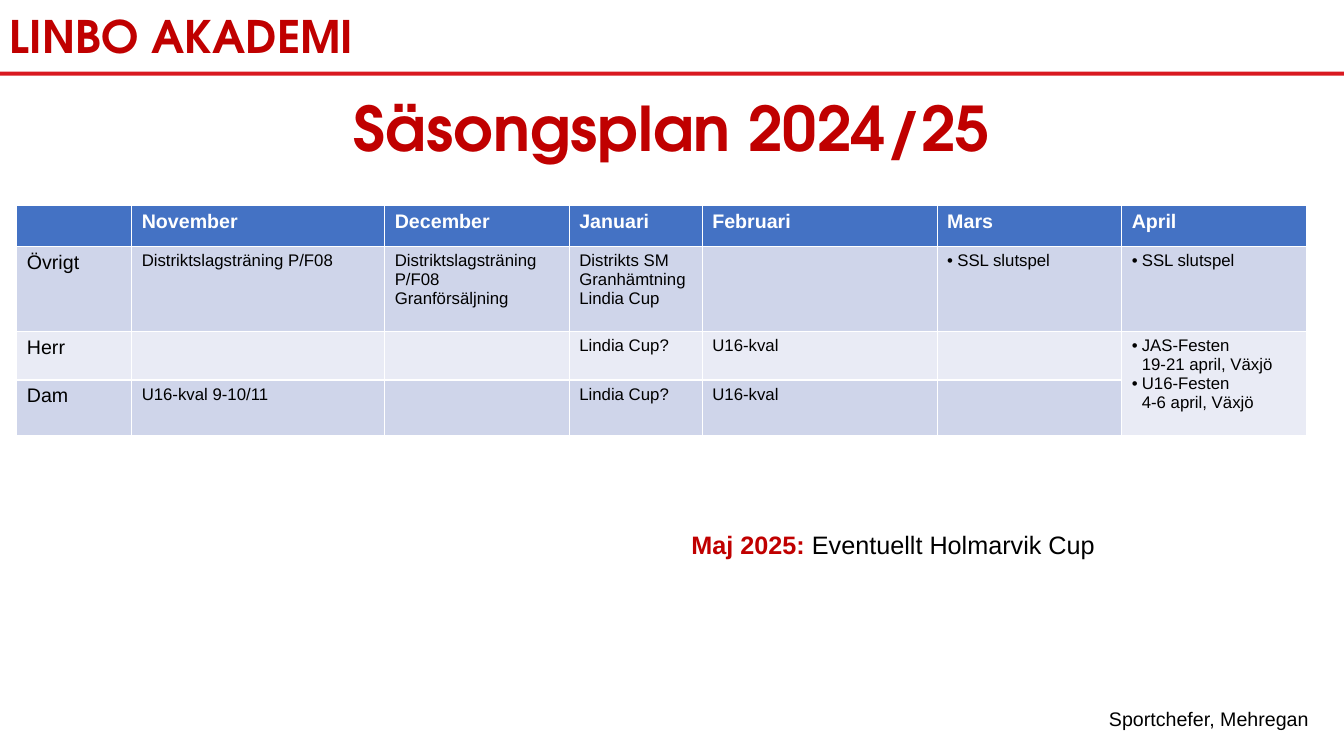
import dataclasses

import lxml.etree
import pptx
import pptx.dml.color
import pptx.enum.shapes
import pptx.enum.text
import pptx.oxml.ns
import pptx.util

COLOURS = {
    "white": "FFFFFF", "black": "000000", "bar": "D91920", "heading": "C00000",
    "header": "4472C4", "dark band": "CFD5EA", "light band": "E9EBF5",
}
BODY_FONT = "Arial"
DISPLAY_FONT = "TeX Gyre Adventor"
SLIDE_WIDTH = pptx.util.Inches(13.33)
SLIDE_HEIGHT = pptx.util.Inches(7.5)
BULLET = "• "
BULLET_INDENT = pptx.util.Inches(0.1)


@dataclasses.dataclass
class Area:
    """Place on the slide, in percent of its width and height."""
    left: float
    top: float
    width: float
    height: float

    def lengths(self) -> tuple[int, int, int, int]:
        return (across(self.left), down(self.top),
                across(self.width), down(self.height))


@dataclasses.dataclass
class Span:
    text: str
    colour: str = "black"
    bold: bool = False


@dataclasses.dataclass
class Label:
    area: Area
    spans: list[Span]
    size: int
    font: str = BODY_FONT
    centred: bool = False
    middle: bool = False
    wrap: bool = False


def across(percent: float) -> int:
    return round(SLIDE_WIDTH * percent / 100)


def down(percent: float) -> int:
    return round(SLIDE_HEIGHT * percent / 100)


def rgb(name: str) -> pptx.dml.color.RGBColor:
    return pptx.dml.color.RGBColor.from_string(COLOURS[name])


def style_font(font, name: str, size: int, colour: str, bold: bool) -> None:
    font.name = name
    font.size = pptx.util.Pt(size)
    font.bold = bold
    font.color.rgb = rgb(colour)


# Header band: the white block leaves a thin red line below it
BANDS = [("bar", Area(0, 0.53, 100, 9.47)), ("white", Area(0, 0, 100, 9.47))]

LABELS = [
    Label(Area(0, 0.4, 27.53, 8.53), [Span("LINBO AKADEMI", "heading", True)],
          32, DISPLAY_FONT, middle=True),
    Label(Area(6.9, 10, 86.27, 14.67), [Span("Säsongsplan 2024/25", "heading", True)],
          44, DISPLAY_FONT, centred=True, middle=True, wrap=True),
    Label(Area(81.77, 92.8, 16.5, 4.53), [Span("Sportchefer, Mehregan")], 14),
    Label(Area(50.71, 69.33, 33.53, 5.33),
          [Span("Maj 2025: ", "heading", True), Span("Eventuellt Holmarvik Cup")], 18),
]

# Season table: each cell is a list of paragraphs
COLUMN_WIDTHS = [8.55, 18.83, 13.73, 9.9, 17.48, 13.73, 13.73]
ROW_HEIGHTS = [5.4, 11.27, 6.4, 7.4]
ROW_FILLS = ["header", "dark band", "light band", "dark band"]
TABLE_AREA = Area(1.25, 27.2, sum(COLUMN_WIDTHS), sum(ROW_HEIGHTS))
SEASON = [
    [[], ["November"], ["December"], ["Januari"], ["Februari"], ["Mars"], ["April"]],
    [["Övrigt"], ["Distriktslagsträning P/F08"],
     ["Distriktslagsträning P/F08", "Granförsäljning"],
     ["Distrikts SM", "Granhämtning", "Lindia Cup"], [],
     ["• SSL slutspel"], ["• SSL slutspel"]],
    [["Herr"], [], [], ["Lindia Cup?"], ["U16-kval"], [],
     ["• JAS-Festen\n19-21 april, Växjö", "• U16-Festen\n4-6 april, Växjö"]],
    [["Dam"], ["U16-kval 9-10/11"], [], ["Lindia Cup?"], ["U16-kval"], [], []],
]


def draw_band(page, colour: str, area: Area) -> None:
    band = page.shapes.add_shape(
        pptx.enum.shapes.MSO_SHAPE.RECTANGLE, *area.lengths())
    band.shadow.inherit = False
    band.fill.solid()
    band.fill.fore_color.rgb = rgb(colour)
    band.line.fill.background()


def draw_label(page, label: Label) -> None:
    box = page.shapes.add_textbox(*label.area.lengths())
    frame = box.text_frame
    frame.word_wrap = label.wrap
    if label.middle:
        frame.vertical_anchor = pptx.enum.text.MSO_ANCHOR.MIDDLE
    para = frame.paragraphs[0]
    if label.centred:
        para.alignment = pptx.enum.text.PP_ALIGN.CENTER
        para.line_spacing = 0.9
    for span in label.spans:
        run = para.add_run()
        run.text = span.text
        if len(label.spans) > 1:
            style_font(run.font, label.font, label.size, span.colour, span.bold)
    if len(label.spans) == 1:
        span = label.spans[0]
        style_font(para.font, label.font, label.size, span.colour, span.bold)


def add_bullet(para) -> None:
    properties = para._p.get_or_add_pPr()
    properties.set("marL", str(BULLET_INDENT))
    properties.set("indent", str(-BULLET_INDENT))
    font = lxml.etree.SubElement(properties, pptx.oxml.ns.qn("a:buFont"))
    font.set("typeface", BODY_FONT)
    mark = lxml.etree.SubElement(properties, pptx.oxml.ns.qn("a:buChar"))
    mark.set("char", BULLET.strip())


def fill_cell(cell, texts: list[str], size: int, colour: str, bold: bool) -> None:
    frame = cell.text_frame
    for index, text in enumerate(texts):
        para = frame.add_paragraph() if index else frame.paragraphs[0]
        if text.startswith(BULLET):
            add_bullet(para)
        para.text = text.removeprefix(BULLET)
        style_font(para.font, BODY_FONT, size, colour, bold)


def draw_season(page) -> None:
    table = page.shapes.add_table(
        len(ROW_HEIGHTS), len(COLUMN_WIDTHS), *TABLE_AREA.lengths()).table
    for column, width in zip(table.columns, COLUMN_WIDTHS):
        column.width = across(width)
    for row, height in zip(table.rows, ROW_HEIGHTS):
        row.height = down(height)
    # April holds one shared cell for Herr and Dam
    table.cell(2, 6).merge(table.cell(3, 6))
    for row_index, row in enumerate(SEASON):
        is_header = row_index == 0
        for column_index, texts in enumerate(row):
            cell = table.cell(row_index, column_index)
            cell.fill.solid()
            cell.fill.fore_color.rgb = rgb(ROW_FILLS[row_index])
            size = 14 if is_header or column_index == 0 else 12
            fill_cell(cell, texts, size, "white" if is_header else "black", is_header)


def main() -> None:
    deck = pptx.Presentation()
    deck.slide_width = SLIDE_WIDTH
    deck.slide_height = SLIDE_HEIGHT
    page = deck.slides.add_slide(deck.slide_layouts[6])
    for colour, area in BANDS:
        draw_band(page, colour, area)
    for label in LABELS:
        draw_label(page, label)
    draw_season(page)
    deck.save("out.pptx")


if __name__ == "__main__":
    main()
